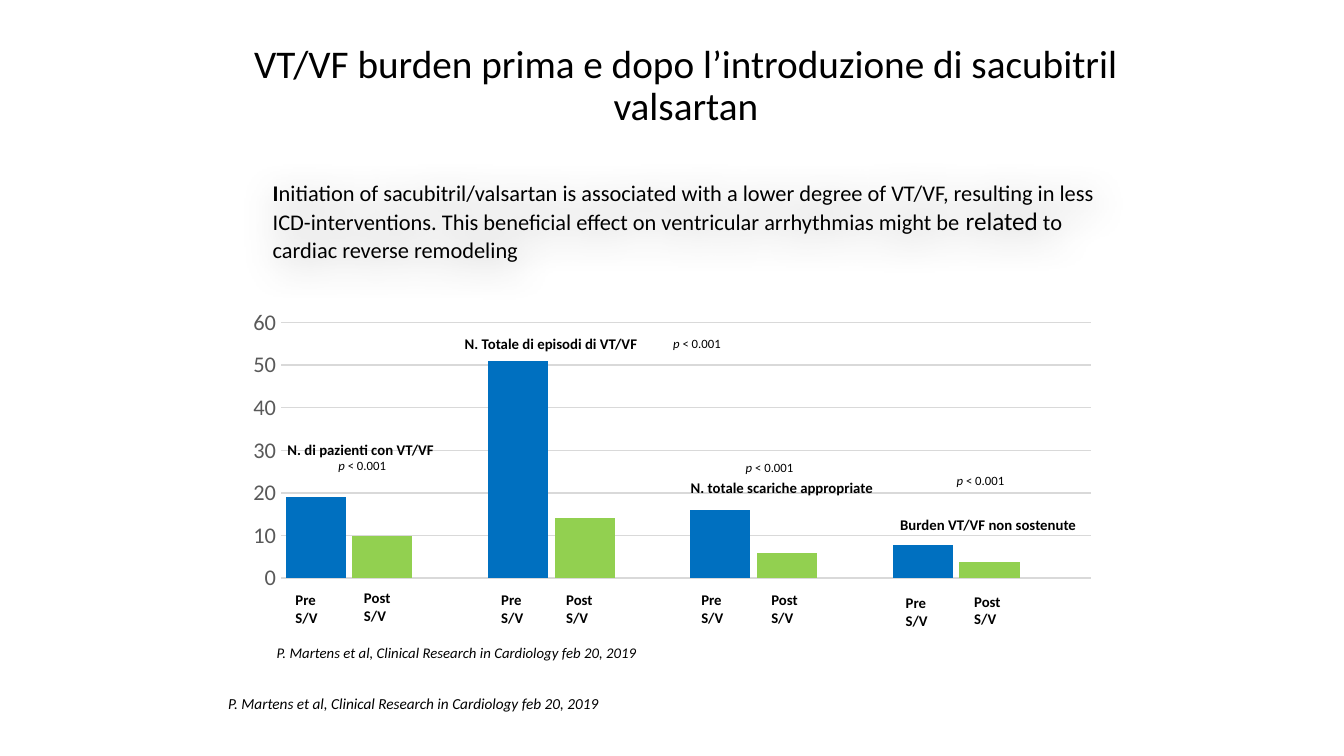
"""Build the slide on VT/VF burden before and after sacubitril/valsartan."""
import pptx
import pptx.chart.data
import pptx.dml.color
import pptx.enum.chart
import pptx.enum.text
import pptx.oxml
import pptx.util
from lxml import etree

Pt = pptx.util.Pt
RGBColor = pptx.dml.color.RGBColor
BLACK = RGBColor(0, 0, 0)
WHITE = RGBColor(255, 255, 255)
GREY = RGBColor(0x59, 0x59, 0x59)
GRID = RGBColor(0xD9, 0xD9, 0xD9)
FONT = "Calibri"

TITLE = "VT/VF burden prima e dopo l’introduzione di sacubitril valsartan"
SUMMARY = [
    ("I", {"size": Pt(12), "bold": True}),
    ("nitiation of sacubitril/valsartan is associated with a lower degree of VT/VF, "
     "resulting in less ICD-interventions. This beneficial effect on ventricular "
     "arrhythmias might be ", {"size": Pt(12)}),
    ("related", {"size": Pt(13.5)}),
    (" to cardiac reverse remodeling", {"size": Pt(12)}),
]
CITATION = "P. Martens et al, Clinical Research in Cardiology feb 20, 2019"
CITATIONS = [((141.1, 341.3, 208.1, 16.6), 7.9), ((115.2, 368.6, 218.2, 17.3), 8.2)]

SERIES = [
    ("Series 1", (19, 51, 16, 7.7), RGBColor(0x00, 0x70, 0xC0)),
    ("Series 2", (10, 14, 6, 3.7), RGBColor(0x92, 0xD0, 0x50)),
    ("Series 3", (None,) * 4, RGBColor(0xA5, 0xA5, 0xA5)),
]
GROUPS = [
    {"name": "N. di pazienti con VT/VF", "at": (146.9, 232.6, 93.6),
     "p": (174.2, 241.9), "pre": (151.2, 313.2), "post": (187.9, 311.8)},
    {"name": "N. Totale di episodi di VT/VF", "at": (241.9, 175.7, 108),
     "p": (353.5, 176.4), "pre": (261.4, 313.2), "post": (296.2, 313.2)},
    {"name": "N. totale scariche appropriate", "at": (362.9, 252.7, 113),
     "p": (392.4, 242.6), "pre": (368.6, 313.2), "post": (406.1, 313.2)},
    {"name": "Burden VT/VF non sostenute", "at": (475.2, 272.9, 110.2),
     "p": (505.4, 249.8), "pre": (478.1, 314.6), "post": (514.8, 313.9)},
]
PLOT = {"layoutTarget": "inner", "xMode": "edge", "yMode": "edge",
        "x": 0.034, "y": 0.22, "w": 0.966, "h": 0.71}


def set_font(font, color=BLACK, **values):
    for key, value in {"name": FONT, **values}.items():
        setattr(font, key, value)
    font.color.rgb = color


def add_text(s, box, runs, wrap=False):
    sp = s.shapes.add_textbox(*map(Pt, box))
    tf = sp.text_frame
    tf.word_wrap = wrap
    tf.auto_size = pptx.enum.text.MSO_AUTO_SIZE.SHAPE_TO_FIT_TEXT
    for text, values in runs:
        r = tf.paragraphs[0].add_run()
        r.text = text
        set_font(r.font, **values)
    return sp


def add_title(s):
    sp = s.shapes.title
    for key, value in zip(("left", "top", "width", "height"), (134.6, 23.8, 465.8, 59)):
        setattr(sp, key, Pt(value))
    tf = sp.text_frame
    for key in ("margin_left", "margin_top", "margin_right", "margin_bottom"):
        setattr(tf, key, 0)
    tf.word_wrap = True
    tf.auto_size = pptx.enum.text.MSO_AUTO_SIZE.NONE
    tf.vertical_anchor = pptx.enum.text.MSO_ANCHOR.TOP
    p = tf.paragraphs[0]
    p.alignment = pptx.enum.text.PP_ALIGN.CENTER
    p.line_spacing = 0.9
    r = p.add_run()
    r.text = TITLE
    set_font(r.font, size=Pt(21))


def add_burden_chart(s):
    data = pptx.chart.data.CategoryChartData()
    data.categories = ["1", "2", "3", "4"]
    for name, values, _ in SERIES:
        data.add_series(name, values)
    kind = pptx.enum.chart.XL_CHART_TYPE.COLUMN_CLUSTERED
    box = map(Pt, (135.4, 130.3, 449.3, 193))
    chart = s.shapes.add_chart(kind, *box, data).chart
    chart.has_legend = chart.has_title = False
    set_font(chart.font, size=Pt(10))
    plot = chart.plots[0]
    plot.gap_width, plot.overlap, plot.vary_by_categories = 15, -11, False
    for series, (_, _, color) in zip(plot.series, SERIES):
        series.format.fill.solid()
        series.format.fill.fore_color.rgb = color
    chart.category_axis.visible = False
    axis = chart.value_axis
    tick = pptx.enum.chart.XL_TICK_MARK.NONE
    for key, value in {"minimum_scale": 0, "maximum_scale": 60, "major_unit": 10,
                       "major_tick_mark": tick, "minor_tick_mark": tick}.items():
        setattr(axis, key, value)
    set_font(axis.tick_labels.font, GREY, size=Pt(12))
    axis.format.line.fill.background()
    line = axis.major_gridlines.format.line
    line.color.rgb, line.width = GRID, Pt(0.75)
    place_plot(chart)


def place_plot(chart):
    ns = pptx.oxml.ns.qn
    area = chart.plots[0]._element.getparent()
    for old in area.findall(ns("c:layout")):
        area.remove(old)
    layout = etree.Element(ns("c:layout"))
    manual = etree.SubElement(layout, ns("c:manualLayout"))
    for key, value in PLOT.items():
        etree.SubElement(manual, ns("c:" + key)).set("val", str(value))
    area.insert(0, layout)


def add_soft_shadow(sp):
    ns = pptx.oxml.ns.qn
    effects = etree.SubElement(sp._element.spPr, ns("a:effectLst"))
    shadow = etree.SubElement(effects, ns("a:outerShdw"), blurRad=str(Pt(20)),
                              dist=str(Pt(4)), dir="5400000", rotWithShape="0")
    color = etree.SubElement(shadow, ns("a:srgbClr"), val=str(BLACK))
    etree.SubElement(color, ns("a:alpha"), val="40000")


def main():
    prs = pptx.Presentation()
    prs.slide_width, prs.slide_height = Pt(720), Pt(405)
    s = prs.slides.add_slide(prs.slide_layouts[5])
    s.background.fill.solid()
    s.background.fill.fore_color.rgb = WHITE
    add_title(s)
    add_burden_chart(s)
    label = {"size": Pt(7.9), "bold": True}
    small = {"size": Pt(6.8)}
    for group in GROUPS:
        add_text(s, (*group["at"], 16.6), [(group["name"], label)])
        add_text(s, (*group["p"], 41, 15.1),
                 [("p ", {**small, "italic": True}), ("< 0.001", small)])
        for key, text, width in (("pre", "Pre S/V", 34.6), ("post", "Post S/V", 36.7)):
            add_text(s, (*group[key], width, 26.6), [(text, label)], wrap=True)
    add_soft_shadow(add_text(s, (139, 92.2, 461.5, 52.6), SUMMARY, wrap=True))
    for box, size in CITATIONS:
        add_text(s, box, [(CITATION, {"size": Pt(size), "italic": True})])
    prs.save("out.pptx")


if __name__ == "__main__":
    main()
